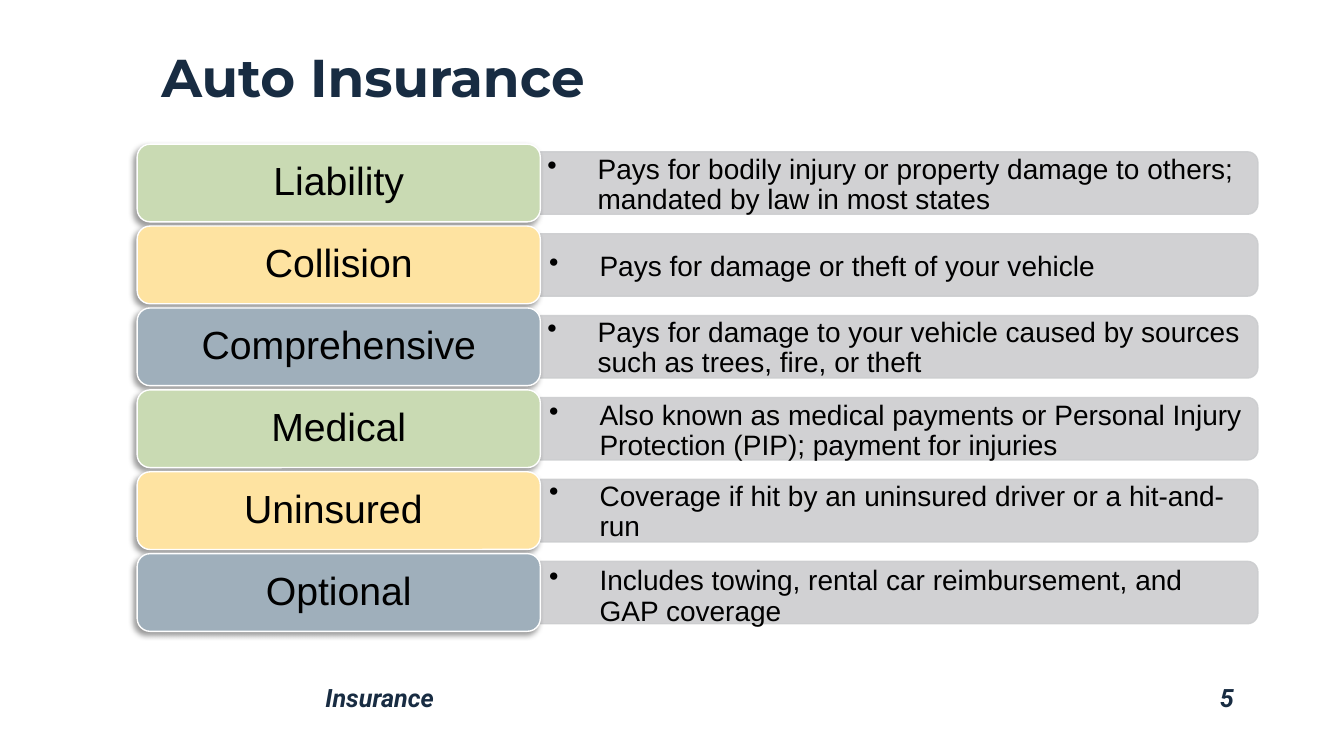
from dataclasses import dataclass

from lxml import etree
from pptx import Presentation
from pptx.dml.color import RGBColor
from pptx.enum.shapes import MSO_SHAPE
from pptx.enum.text import MSO_ANCHOR, MSO_AUTO_SIZE, PP_ALIGN
from pptx.oxml.ns import qn
from pptx.shapes.autoshape import Shape
from pptx.slide import Slide
from pptx.text.text import TextFrame
from pptx.util import Pt

ROUND = MSO_SHAPE.ROUNDED_RECTANGLE
HALF_ROUND = MSO_SHAPE.ROUND_2_SAME_RECTANGLE
TOP, MIDDLE, BOTTOM = MSO_ANCHOR.TOP, MSO_ANCHOR.MIDDLE, MSO_ANCHOR.BOTTOM
LEFT, CENTER, RIGHT = PP_ALIGN.LEFT, PP_ALIGN.CENTER, PP_ALIGN.RIGHT
NO_FIT = MSO_AUTO_SIZE.NONE


@dataclass(frozen=True)
class Theme:
    navy: str = "182C42"
    black: str = "000000"
    white: str = "FFFFFF"
    gray: str = "CCCDCF"
    fills: tuple[str, ...] = ("C9DAB3", "FEE3A1", "9FAFBB")
    head_font: str = "Montserrat"
    body_font: str = "Arial"
    foot_font: str = "Roboto"
    head: int = 38
    label: int = 28
    body: int = 20
    foot: int = 18


@dataclass(frozen=True)
class Cover:
    name: str
    about: str
    left: float
    top: float


THEME = Theme()
COVERS = (
    Cover("Liability", "Pays for bodily injury or property damage to others; "
          "mandated by law in most states", 383.8, 107.3),
    Cover("Collision", "Pays for damage or theft of your vehicle", 385.2, 176.4),
    Cover("Comprehensive", "Pays for damage to your vehicle caused by sources "
          "such as trees, fire, or theft", 383.8, 223.9),
    Cover("Medical", "Also known as medical payments or Personal Injury "
          "Protection (PIP); payment for injuries", 385.2, 283.1),
    Cover("Uninsured ", "Coverage if hit by an uninsured driver or a "
          "hit-and-run", 385.2, 340.6),
    Cover("Optional", "Includes towing, rental car reimbursement, and "
          "GAP coverage", 385.2, 401.2),
)
ROW_TOP, PITCH = 103, 58.5
LABEL_LEFT, LABEL_WIDTH, LABEL_HEIGHT = 98, 288, 55.5
BAR_LEFT, BAR_RIGHT, BAR_HEIGHT = 386, 898.5, 44.6
ABOUT_HEIGHT = 46


def write(frame: TextFrame, text: str, *, size: float, font: str, color: str,
          bold: bool = False, italic: bool = False, align: PP_ALIGN = LEFT,
          anchor: MSO_ANCHOR = TOP, bullet: bool = False) -> None:
    frame.word_wrap = True
    frame.auto_size = NO_FIT
    frame.vertical_anchor = anchor
    para = frame.paragraphs[0]
    if bullet:
        props = para._p.get_or_add_pPr()
        props.set("marL", str(Pt(36)))
        props.set("indent", str(Pt(-36)))
        etree.SubElement(props, qn("a:buChar")).set("char", "•")
    para.alignment = align
    para.line_spacing = 0.9
    para.space_before = Pt(0)
    run = para.add_run()
    run.text = text
    face = run.font
    face.size, face.name = Pt(size), font
    face.bold, face.italic = bold, italic
    face.color.rgb = RGBColor.from_string(color)


def add_text(slide: Slide, left: float, top: float, width: float,
             height: float, text: str, **style) -> None:
    box = slide.shapes.add_textbox(Pt(left), Pt(top), Pt(width), Pt(height))
    write(box.text_frame, text, **style)


def add_block(slide: Slide, kind: MSO_SHAPE, left: float, top: float,
              width: float, height: float, fill: str, line: str) -> Shape:
    block = slide.shapes.add_shape(kind, Pt(left), Pt(top), Pt(width), Pt(height))
    block.shadow.inherit = False
    block.fill.solid()
    block.fill.fore_color.rgb = RGBColor.from_string(fill)
    block.line.color.rgb = RGBColor.from_string(line)
    block.line.width = Pt(1)
    return block


def set_alpha(color: etree._Element, percent: int) -> None:
    etree.SubElement(color, qn("a:alpha")).set("val", str(percent * 1000))


def add_shadow(block: Shape) -> None:
    effects = block._element.spPr.find(qn("a:effectLst"))
    shade = etree.SubElement(effects, qn("a:outerShdw"))
    shade.set("blurRad", str(Pt(4)))
    shade.set("dist", str(Pt(3)))
    shade.set("dir", str(135 * 60000))
    shade.set("rotWithShape", "0")
    color = etree.SubElement(shade, qn("a:srgbClr"))
    color.set("val", THEME.black)
    set_alpha(color, 40)


def add_bar(slide: Slide, middle: float) -> None:
    length = BAR_RIGHT - BAR_LEFT
    left = (BAR_LEFT + BAR_RIGHT - BAR_HEIGHT) / 2
    bar = add_block(slide, HALF_ROUND, left, middle - length / 2,
                    BAR_HEIGHT, length, THEME.gray, THEME.gray)
    bar.rotation = 90
    for color in list(bar._element.spPr.iter(qn("a:srgbClr"))):
        set_alpha(color, 90)


def add_cover(slide: Slide, cover: Cover, row: int) -> None:
    top = ROW_TOP + row * PITCH
    add_bar(slide, top + LABEL_HEIGHT / 2)
    fill = THEME.fills[row % len(THEME.fills)]
    label = add_block(slide, ROUND, LABEL_LEFT, top, LABEL_WIDTH,
                      LABEL_HEIGHT, fill, THEME.white)
    add_shadow(label)
    write(label.text_frame, cover.name, size=THEME.label, font=THEME.body_font,
          color=THEME.black, align=CENTER, anchor=MIDDLE)
    add_text(slide, cover.left, cover.top, BAR_RIGHT - cover.left, ABOUT_HEIGHT,
             cover.about, size=THEME.body, font=THEME.body_font,
             color=THEME.black, bullet=True)


def main() -> None:
    deck = Presentation()
    deck.slide_width, deck.slide_height = Pt(960), Pt(540)
    slide = deck.slides.add_slide(deck.slide_layouts[5])
    title = slide.shapes.title
    title.left, title.top = Pt(108), Pt(8)
    title.width, title.height = Pt(780.5), Pt(73.5)
    write(title.text_frame, "Auto Insurance", size=THEME.head,
          font=THEME.head_font, color=THEME.navy, bold=True, anchor=BOTTOM)
    for row, cover in enumerate(COVERS):
        add_cover(slide, cover, row)
    foot = dict(size=THEME.foot, font=THEME.foot_font, color=THEME.navy,
                bold=True, italic=True)
    add_text(slide, 225.4, 486, 549.4, 27.4, "Insurance", **foot)
    add_text(slide, 774.7, 486, 113.8, 27.4, "5", align=RIGHT, **foot)
    deck.save("out.pptx")


if __name__ == "__main__":
    main()
